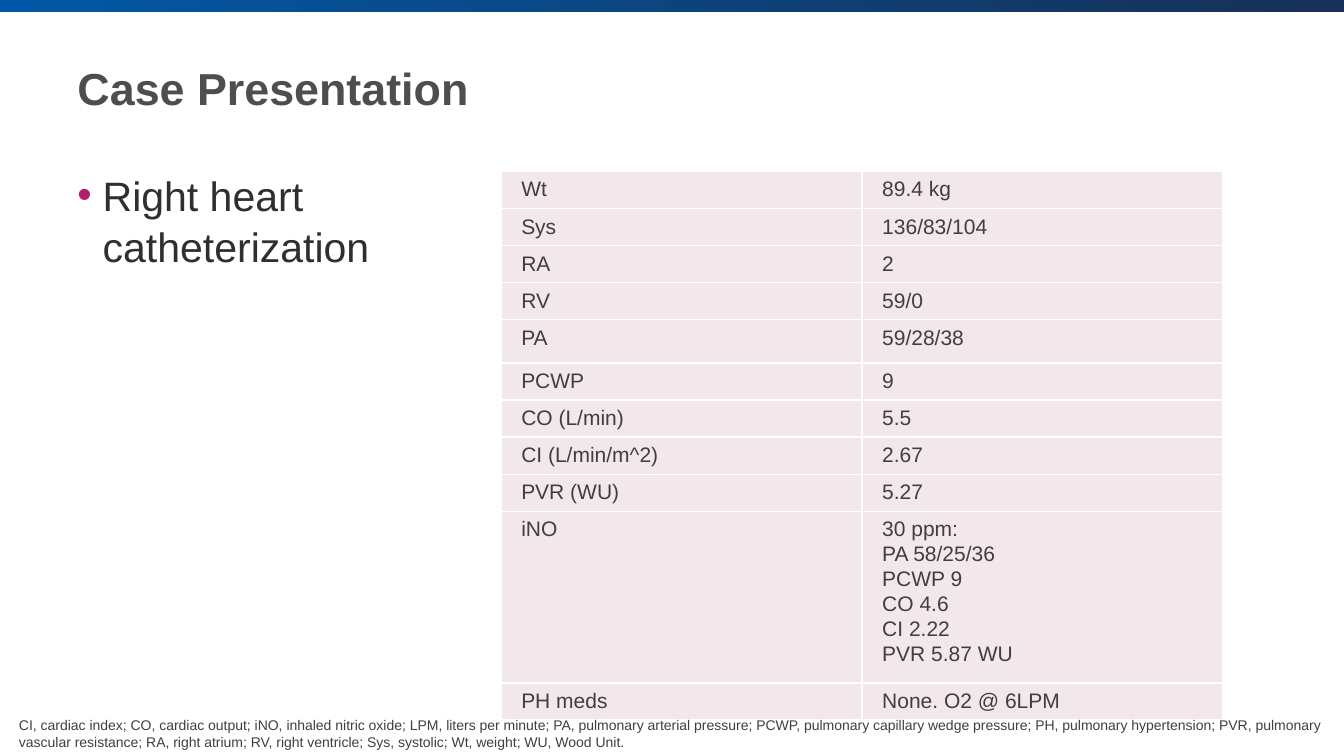
import pptx
import pptx.dml.color
import pptx.enum.shapes
import pptx.enum.text
import pptx.util
from lxml import etree
from pptx.oxml.ns import qn
from pptx.util import Inches

DARK_GRAY = "3F3F3F"
HEMODYNAMICS = [
    ("Wt", "89.4 kg"),
    ("Sys", "136/83/104"),
    ("RA", "2"),
    ("RV", "59/0"),
    ("PA", "59/28/38"),
    ("PCWP", "9"),
    ("CO (L/min)", "5.5"),
    ("CI (L/min/m^2)", "2.67"),
    ("PVR (WU)", "5.27"),
    ("iNO", "30 ppm:\nPA 58/25/36\nPCWP 9\nCO 4.6\nCI 2.22\nPVR 5.87 WU"),
    ("PH meds", "None. O2 @ 6LPM"),
]
ROW_HEIGHT = 0.28
TALL_ROWS = {"PA": 0.43, "iNO": 1.67}


def color(value):
    return pptx.dml.color.RGBColor.from_string(value)


def write(text_frame, text, size, text_color, bold=False):
    text_frame.text = text
    text_frame.word_wrap = True
    for paragraph in text_frame.paragraphs:
        for run in paragraph.runs:
            run.font.name = "Arial"
            run.font.size = pptx.util.Pt(size)
            run.font.bold = bold
            run.font.color.rgb = color(text_color)


presentation = pptx.Presentation()
presentation.slide_width = Inches(13.33)
presentation.slide_height = Inches(7.5)
slide = presentation.slides.add_slide(presentation.slide_layouts[6])

# Gradient band along the top
band = slide.shapes.add_shape(
    pptx.enum.shapes.MSO_SHAPE.RECTANGLE, 0, 0, Inches(13.33), Inches(0.12))
band.shadow.inherit = False
band.line.fill.background()
band.fill.gradient()
band.fill.gradient_angle = 0
for stop, (position, stop_color) in zip(
        band.fill.gradient_stops, [(0, "0258A6"), (0.99, "173057")]):
    stop.position = position
    stop.color.rgb = color(stop_color)

# Title
title = slide.shapes.add_textbox(Inches(0.67), Inches(0.22), Inches(11.75), Inches(1.3))
write(title.text_frame, "Case Presentation", 32, "4D4E4D", bold=True)
title.text_frame.vertical_anchor = pptx.enum.text.MSO_ANCHOR.MIDDLE

# Bulleted body text
body = slide.shapes.add_textbox(Inches(0.67), Inches(1.62), Inches(3.89), Inches(5.16))
write(body.text_frame, "Right heart catheterization", 29.3, "2F2F2F")
paragraph = body.text_frame.paragraphs[0]
paragraph.space_before = pptx.util.Pt(10)
paragraph.line_spacing = 1.04
properties = paragraph._p.get_or_add_pPr()
properties.set("marL", str(Inches(0.25)))
properties.set("indent", str(Inches(-0.25)))
bullet_color = etree.SubElement(properties, qn("a:buClr"))
etree.SubElement(bullet_color, qn("a:srgbClr"), val="B21E6C")
etree.SubElement(properties, qn("a:buFont"), typeface="Arial")
etree.SubElement(properties, qn("a:buChar"), char="•")

# Catheterization table
heights = [TALL_ROWS.get(label, ROW_HEIGHT) for label, value in HEMODYNAMICS]
table = slide.shapes.add_table(
    len(HEMODYNAMICS), 2, Inches(4.97), Inches(1.7),
    Inches(7.16), Inches(sum(heights))).table
table.first_row = False
table.horz_banding = False
for row, height, texts in zip(table.rows, heights, HEMODYNAMICS):
    row.height = Inches(height)
    for cell, text in zip(row.cells, texts):
        write(cell.text_frame, text, 15, DARK_GRAY)
        for paragraph in cell.text_frame.paragraphs:
            paragraph.line_spacing = 1.07
        cell.margin_left = Inches(0.2)
        cell.margin_right = Inches(0.01)
        cell.margin_top = cell.margin_bottom = Inches(0.05)
        cell_properties = cell._tc.get_or_add_tcPr()
        for side in ("a:lnL", "a:lnR", "a:lnT", "a:lnB"):
            border = etree.SubElement(
                cell_properties, qn(side), w=str(pptx.util.Pt(1)))
            border_fill = etree.SubElement(border, qn("a:solidFill"))
            etree.SubElement(border_fill, qn("a:srgbClr"), val="FFFFFF")
        cell.fill.solid()
        cell.fill.fore_color.rgb = color("F2E8EB")

# Abbreviations
footnote = slide.shapes.add_textbox(Inches(0.09), Inches(7.06), Inches(13.16), Inches(0.44))
write(
    footnote.text_frame,
    "CI, cardiac index; CO, cardiac output; iNO, inhaled nitric oxide; "
    "LPM, liters per minute; PA, pulmonary arterial pressure; "
    "PCWP, pulmonary capillary wedge pressure; PH, pulmonary hypertension; "
    "PVR, pulmonary vascular resistance; RA, right atrium; RV, right ventricle; "
    "Sys, systolic; Wt, weight; WU, Wood Unit.",
    10, DARK_GRAY)
footnote.text_frame.auto_size = pptx.enum.text.MSO_AUTO_SIZE.SHAPE_TO_FIT_TEXT

presentation.save("out.pptx")
